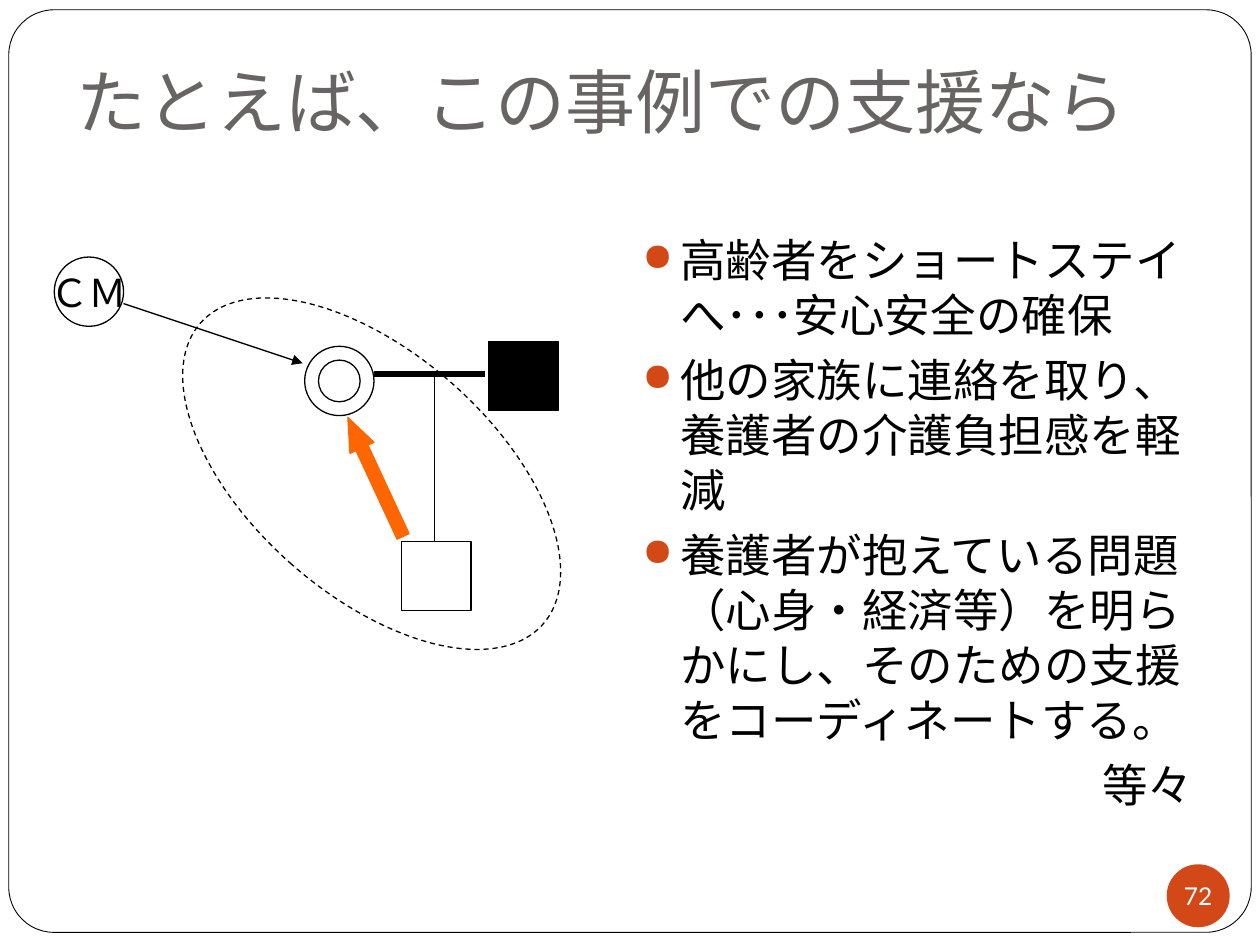
from lxml import etree
from pptx import Presentation
from pptx import util as u
from pptx.dml.color import RGBColor
from pptx.enum import dml, shapes, text
from pptx.oxml.ns import qn

Pt = u.Pt
BLACK = RGBColor(0, 0, 0)
WHITE = RGBColor(255, 255, 255)
GREY = RGBColor(0x69, 0x64, 0x64)
RED = RGBColor(0xD3, 0x48, 0x17)
ORANGE = RGBColor(0xFF, 0x66, 0x00)
CJK = "Noto Sans CJK JP"
KIND = shapes.MSO_SHAPE
LEFT, MID, RIGHT = text.PP_ALIGN.LEFT, text.PP_ALIGN.CENTER, text.PP_ALIGN.RIGHT

# Content
TITLE = "たとえば、この事例での支援なら"
POINTS = [
    "高齢者をショートステイへ･･･安心安全の確保",
    "他の家族に連絡を取り、養護者の介護負担感を軽減",
    "養護者が抱えている問題（心身・経済等）を明らかにし、そのための支援をコーディネートする。",
]
CLOSE = "等々"
SIDE = 39.6  # size of each person symbol

# Family map: kind, left, top, width, height, fill
PEOPLE = [
    (KIND.RECTANGLE, 279.2, 195.1, SIDE, SIDE, BLACK),
    (KIND.OVAL, 174.1, 197.9, SIDE, SIDE, None),
    (KIND.OVAL, 182, 205.8, 23.8, 23.8, None),
    (KIND.RECTANGLE, 229.5, 309.5, SIDE, SIDE, None),
]
# Ties: from, to, width, arrowhead
TIES = [
    ((213.7, 213.7), (277.2, 213.7), 3, False),
    ((248.5, 213.7), (248.5, 309.2), 0.75, False),
    ((70.6, 173.5), (172.9, 207.6), 0.75, True),
]

deck = Presentation()
deck.slide_width, deck.slide_height = Pt(720), Pt(540)
slide = deck.slides.add_slide(deck.slide_layouts[6])


def draw(kind, x, y, w, h, fill=None, line=BLACK, width=0.75):
    shape = slide.shapes.add_shape(kind, Pt(x), Pt(y), Pt(w), Pt(h))
    shape.shadow.inherit = False
    if fill is None:
        shape.fill.background()
    else:
        shape.fill.solid()
        shape.fill.fore_color.rgb = fill
    if line is None:
        shape.line.fill.background()
    else:
        shape.line.color.rgb = line
        shape.line.width = Pt(width)
    return shape


def style(para, size, color, name=CJK, align=LEFT):
    para.alignment = align
    font = para.font
    font.size, font.name, font.color.rgb = Pt(size), name, color
    # East Asian letters take their own typeface
    etree.SubElement(font._element, qn("a:ea"), typeface=CJK)


def bullet(para):
    props = para._p.get_or_add_pPr()
    color = etree.SubElement(props, qn("a:buClr"))
    etree.SubElement(color, qn("a:srgbClr"), val=str(RED))
    etree.SubElement(props, qn("a:buSzPct"), val="85000")
    etree.SubElement(props, qn("a:buChar"), char="●")


def box(x, y, w, h, top, base):
    frame = slide.shapes.add_textbox(Pt(x), Pt(y), Pt(w), Pt(h)).text_frame
    frame.word_wrap = True
    frame.margin_top, frame.margin_bottom = Pt(top), Pt(base)
    return frame


def label(shape, words, size, color, name):
    frame = shape.text_frame
    frame.word_wrap = False
    frame.vertical_anchor = text.MSO_ANCHOR.MIDDLE
    frame.margin_left = frame.margin_right = 0
    frame.margin_top = frame.margin_bottom = 0
    frame.text = words
    style(frame.paragraphs[0], size, color, name, MID)


# Page frame
page = draw(KIND.ROUNDED_RECTANGLE, 5, 5.6, 710, 533 - 5.6 + 5.6, WHITE, width=0.5)
page.height = Pt(527.2)
page.adjustments[0] = 0.049

# Title
head = box(36.5, 9.4, 648, 76.3, 3.6, 4.2)
head.vertical_anchor = text.MSO_ANCHOR.BOTTOM
head.text = TITLE
style(head.paragraphs[0], 40, GREY)

# Support points
body = box(360, 126.7, 329, 385.2, 5.6, 3.6)
body.text = "\n".join(POINTS + [CLOSE])
for i, para in enumerate(body.paragraphs):
    listed = i < len(POINTS)
    if listed:
        bullet(para)
    props = para._p.get_or_add_pPr()
    props.set("marL", str(Pt(21.6)))
    props.set("indent", str(-Pt(21.6)))
    para.space_before = Pt(5.8 if i else 0)
    para.line_spacing = Pt(31.4)
    style(para, 26, BLACK, align=LEFT if listed else RIGHT)

# People and their ties
for person in PEOPLE:
    draw(*person)
for start, end, width, arrow in TIES:
    tie = slide.shapes.add_connector(
        shapes.MSO_CONNECTOR.STRAIGHT, *(Pt(v) for v in start + end))
    tie.line.color.rgb = BLACK
    tie.line.width = Pt(width)
    if arrow:
        etree.SubElement(tie.line._get_or_add_ln(), qn("a:tailEnd"), type="triangle")
    etree.SubElement(tie._element.spPr, qn("a:effectLst"))

# Family boundary
ring = draw(KIND.OVAL, 143.3, 140.4, 138.2, 260.6)
ring.rotation = 311.3
ring.line.dash_style = dml.MSO_LINE.DASH

# Care arrow
care = draw(KIND.RIGHT_ARROW, 177.1, 265, 74.9, 15.1, ORANGE, ORANGE)
care.rotation = 245.1
care.adjustments[0], care.adjustments[1] = 0.5, 1.263

# Care manager and page number
label(draw(KIND.OVAL, 31, 146.9, SIDE, SIDE), "ＣＭ", 22, BLACK, "Arial")
label(draw(KIND.OVAL, 666.7, 493.9, 36, 36, RED, None), "72", 14, WHITE, "Lato")

deck.save("out.pptx")
